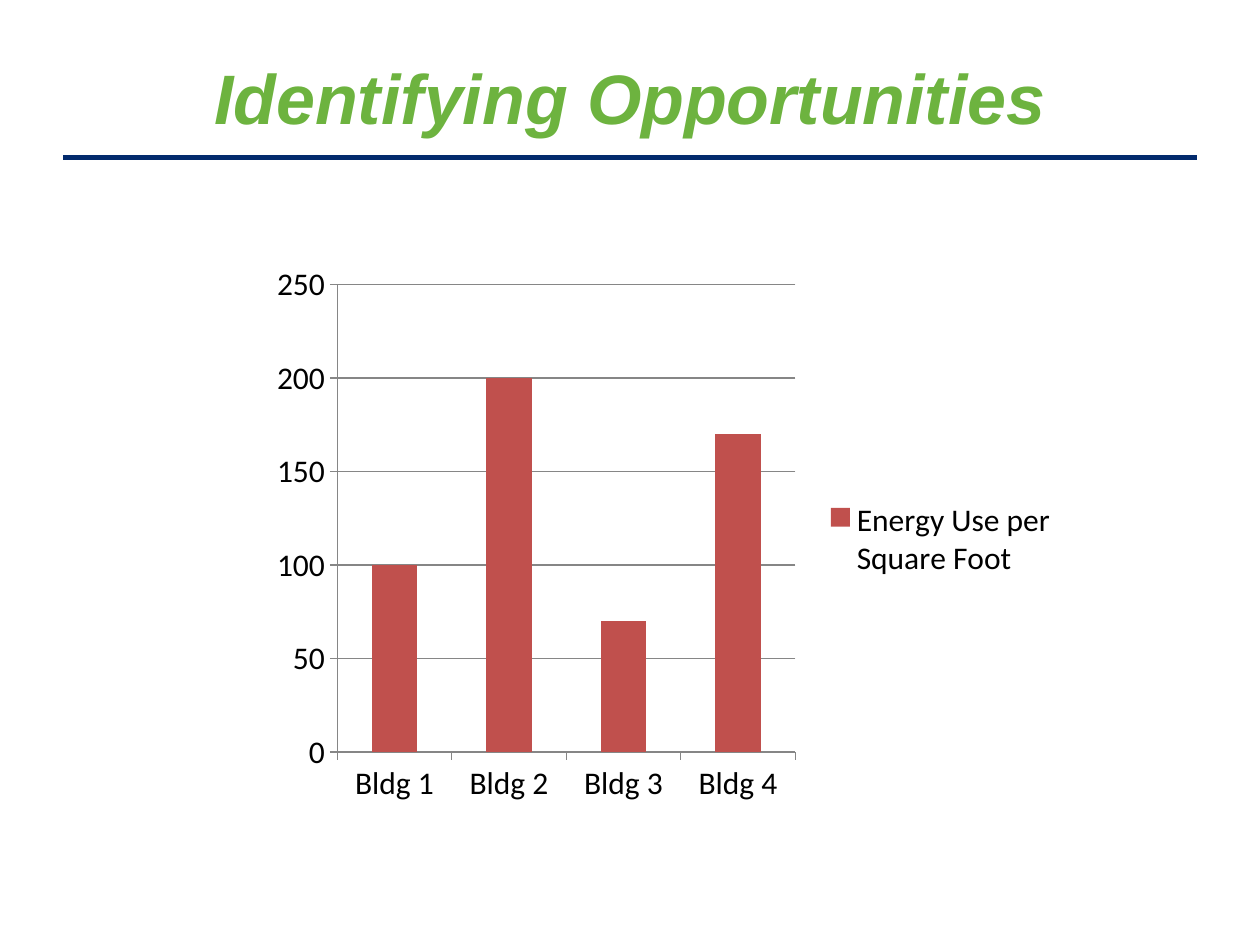
from dataclasses import dataclass
from lxml import etree
from pptx import Presentation
from pptx.chart.data import CategoryChartData as ChartData
from pptx.dml.color import RGBColor as RGB
from pptx.enum.chart import XL_CHART_TYPE as Kind, XL_LEGEND_POSITION as Pos, XL_TICK_MARK as Tick
from pptx.enum.shapes import MSO_CONNECTOR as Link
from pptx.enum.text import MSO_ANCHOR as Anchor, PP_ALIGN as Align
from pptx.oxml import parse_xml
from pptx.oxml.ns import nsdecls, qn
from pptx.util import Inches, Pt


@dataclass(frozen=True)
class Theme:
    green: RGB = RGB(0x6D, 0xB3, 0x3F)
    navy: RGB = RGB(0x03, 0x2B, 0x6D)
    red: RGB = RGB(0xC0, 0x50, 0x4D)
    gray: RGB = RGB(0x86, 0x86, 0x86)
    black: RGB = RGB(0, 0, 0)
    head: str = "Arial"
    body: str = "Calibri"
    big: Pt = Pt(40)
    small: Pt = Pt(18)


THEME = Theme()
WIDE, HIGH = Inches(10), Inches(7.5)
PLOT = {"x": 0.127, "y": 0.044, "w": 0.545, "h": 0.836}
USE = {"Bldg 1": 100, "Bldg 2": 200, "Bldg 3": 70, "Bldg 4": 170}


def box(x, y, w, h):
    """Turn shares of the slide's size into lengths."""
    return int(x * WIDE), int(y * HIGH), int(w * WIDE), int(h * HIGH)


def style(item, form):
    for name, value in form.items():
        setattr(item, name, value)


def add_title(slide, text):
    title = slide.shapes.title
    style(title, dict(zip(("left", "top", "width", "height"), box(0, 0.044, 1, 0.2))))
    frame = title.text_frame
    style(frame, {"text": text, "vertical_anchor": Anchor.TOP,
                  "word_wrap": True, "margin_top": Inches(0.1)})
    para = frame.paragraphs[0]
    para.alignment = Align.CENTER
    font = para.runs[0].font
    style(font, {"name": THEME.head, "size": THEME.big, "bold": True, "italic": True})
    font.color.rgb = THEME.green


def add_rule(slide, x, y, w):
    left, top, width, _ = box(x, y, w, 0)
    rule = slide.shapes.add_connector(Link.STRAIGHT, left, top, left + width, top)
    rule.line.color.rgb = THEME.navy
    rule.line.width = Pt(3)
    etree.SubElement(rule.line._get_or_add_ln().getparent(), qn("a:effectLst"))


def set_plot(chart):
    """Fix the inner plot area at its share of the chart."""
    modes = "".join(f'<c:{side}Mode val="edge"/>' for side in "xy")
    sizes = "".join(f'<c:{side} val="{share}"/>' for side, share in PLOT.items())
    area = chart._chartSpace.chart.plotArea
    for old in area.findall(qn("c:layout")):
        area.remove(old)
    area.insert(0, parse_xml(
        f'<c:layout {nsdecls("c")}><c:manualLayout><c:layoutTarget val="inner"/>'
        f'{modes}{sizes}</c:manualLayout></c:layout>'))


def add_bars(slide, name, values, place):
    data = ChartData()
    data.categories = list(values)
    data.add_series(name, list(values.values()))
    chart = slide.shapes.add_chart(Kind.COLUMN_CLUSTERED, *place, data).chart
    style(chart, {"has_title": False, "has_legend": True})
    style(chart.legend, {"position": Pos.RIGHT, "include_in_layout": False})
    style(chart.font, {"name": THEME.body, "size": THEME.small})
    chart.font.color.rgb = THEME.black
    plot = chart.plots[0]
    style(plot, {"gap_width": 150, "vary_by_categories": False})
    fill = plot.series[0].format.fill
    fill.solid()
    fill.fore_color.rgb = THEME.red
    cat, val = chart.category_axis, chart.value_axis
    style(val, {"has_major_gridlines": True, "minimum_scale": 0,
                "maximum_scale": 250, "major_unit": 50})
    for axis in (cat, val):
        axis.major_tick_mark = Tick.OUTSIDE
    for part in (cat, val, val.major_gridlines):
        part.format.line.color.rgb = THEME.gray
        part.format.line.width = Pt(0.75)
    set_plot(chart)


def main():
    deck = Presentation()
    style(deck, {"slide_width": WIDE, "slide_height": HIGH})
    slide = deck.slides.add_slide(deck.slide_layouts.get_by_name("Title Only"))
    add_rule(slide, 0.05, 1 / 6, 0.9)
    add_title(slide, "Identifying Opportunities")
    add_bars(slide, "Energy Use per Square Foot", USE, box(0.183, 0.275, 0.667, 0.592))
    deck.save("out.pptx")


if __name__ == "__main__":
    main()
